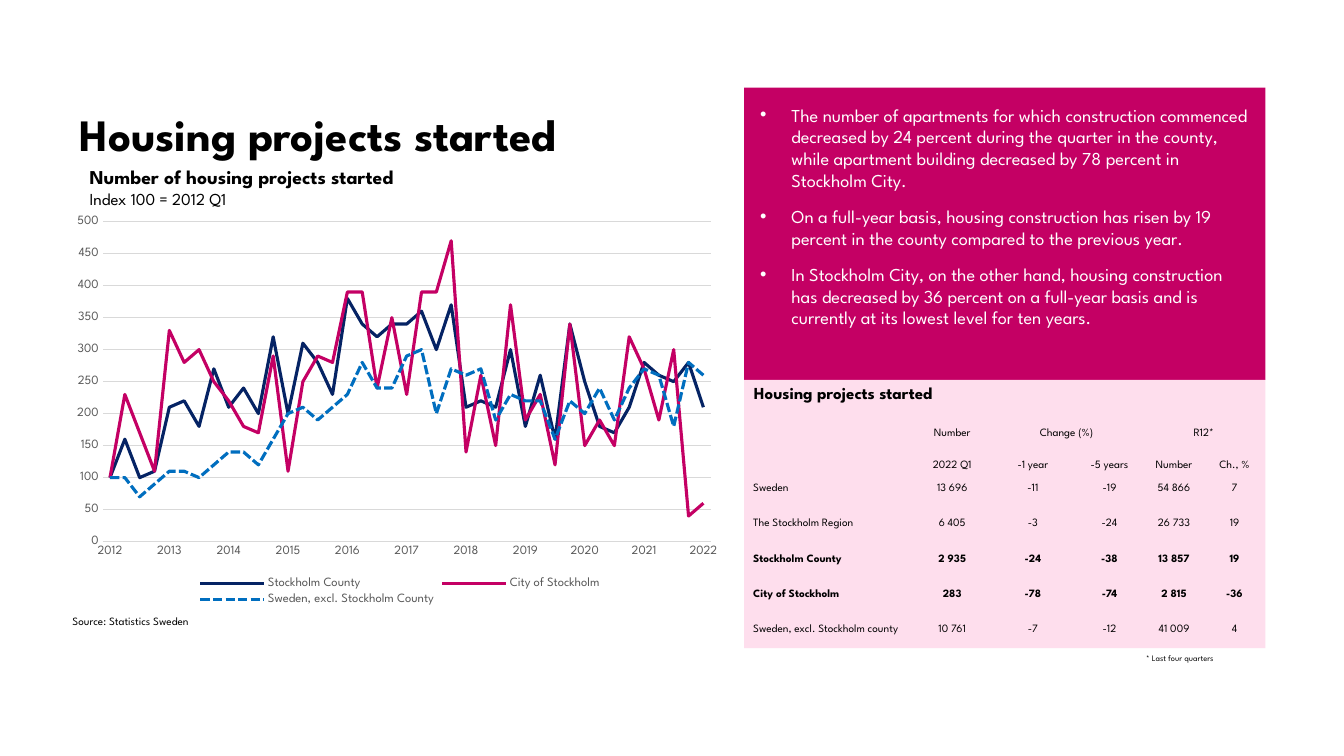
"""Build the slide on housing projects started in Stockholm."""
from lxml import etree
from pptx import Presentation
from pptx.chart.data import CategoryChartData
from pptx.dml.color import RGBColor
from pptx.enum.chart import XL_CHART_TYPE, XL_LEGEND_POSITION, XL_TICK_MARK
from pptx.enum.dml import MSO_LINE
from pptx.enum.shapes import MSO_SHAPE
from pptx.enum.text import MSO_ANCHOR, MSO_AUTO_SIZE, PP_ALIGN
from pptx.oxml import parse_xml
from pptx.oxml.ns import nsdecls, qn
from pptx.util import Inches, Pt

LEFT, CENTER = PP_ALIGN.LEFT, PP_ALIGN.CENTER
TOP, MIDDLE, BOTTOM = MSO_ANCHOR.TOP, MSO_ANCHOR.MIDDLE, MSO_ANCHOR.BOTTOM
NO_TICK = XL_TICK_MARK.NONE
SOLID, DASH = MSO_LINE.SOLID, MSO_LINE.SQUARE_DOT
FONT = "League Spartan"
NO_GRID_STYLE = "{2D5ABB26-0587-4C30-8999-92F81FD0307C}"
COLORS = {"black": "000000", "white": "FFFFFF", "magenta": "C40064", "pink": "FEDEED",
          "navy": "052364", "blue": "006EBF", "label": "595959", "grid": "D9D9D9"}

TITLE = "Housing projects started"
BULLETS = [
    "The number of apartments for which construction commenced decreased by 24 percent during "
    "the quarter in the county, while apartment building decreased by 78 percent in Stockholm City.",
    "On a full-year basis, housing construction has risen by 19 percent in the county compared "
    "to the previous year.",
    "In Stockholm City, on the other hand, housing construction has decreased by 36 percent on a "
    "full-year basis and is currently at its lowest level for ten years.",
]
NOTES = [
    ((0.62, 6.05, 1.57, 0.24), False, [("Source: Statistics Sweden", 8, False)]),
    ((7.38, 3.75, 2.16, 0.3), False, [("Housing projects started", 12, True)]),
    ((11.27, 6.43, 0.95, 0.2), False, [("* Last four quarters", 6, False)]),
    ((0.79, 1.59, 4.58, 0.54), True, [("Number of housing projects started", 14, True),
                                      ("Index 100 = 2012 Q1", 12, False)]),
]
TABLE = [
    ["", "Number", "Change (%)", "", "R12*", ""],
    ["", "2022 Q1", "-1 year", "-5 years", "Number", "Ch., %"],
    ["Sweden", "13 696", "-11", "-19", "54 866", "7"],
    ["The Stockholm Region", "6 405", "-3", "-24", "26 733", "19"],
    ["Stockholm County", "2 935", "-24", "-38", "13 857", "19"],
    ["City of Stockholm", "283", "-78", "-74", "2 815", "-36"],
    ["Sweden, excl. Stockholm county", "10 761", "-7", "-12", "41 009", "4"],
]
HEADER_ROWS = 2
BOLD_ROWS = (4, 5)
MERGED_COLS = (2, 4)
COL_WIDTHS = [1.69, 0.75, 0.85, 0.67, 0.61, 0.59]
ROW_HEIGHTS = [0.3, 0.31] + [0.35] * 5
YEARS = range(2012, 2023)
SERIES = [
    ("Stockholm County", "navy", SOLID,
     [100, 160, 100, 110, 210, 220, 180, 270, 210, 240, 200, 320, 200, 310, 280, 230, 380, 340,
      320, 340, 340, 360, 300, 370, 210, 220, 210, 300, 180, 260, 160, 340, 250, 180, 170, 210,
      280, 260, 250, 280, 210]),
    ("City of Stockholm", "magenta", SOLID,
     [100, 230, 170, 110, 330, 280, 300, 250, 220, 180, 170, 290, 110, 250, 290, 280, 390, 390,
      240, 350, 230, 390, 390, 470, 140, 260, 150, 370, 190, 230, 120, 340, 150, 190, 150, 320,
      270, 190, 300, 40, 60]),
    ("Sweden, excl. Stockholm County", "blue", DASH,
     [100, 100, 70, 90, 110, 110, 100, 120, 140, 140, 120, 160, 200, 210, 190, 210, 230, 280,
      240, 240, 290, 300, 200, 270, 260, 270, 190, 230, 220, 220, 160, 220, 200, 240, 190, 240,
      270, 260, 180, 280, 260]),
]


def rgb(name):
    return RGBColor.from_string(COLORS[name])


def box(*lengths):
    return [Inches(v) for v in lengths]


def place(shape, *lengths):
    shape.left, shape.top, shape.width, shape.height = box(*lengths)


def set_margins(obj, left, top, right, bottom):
    obj.margin_left, obj.margin_top, obj.margin_right, obj.margin_bottom = box(
        left, top, right, bottom)


def set_font(font, size, color="black", bold=False):
    font.name, font.size, font.bold = FONT, Pt(size), bold
    font.color.rgb = rgb(color)


def write(tf, text, size=8, color="black", bold=False, align=LEFT, before=0, bullet=False):
    p = tf.paragraphs[0]
    if p.runs:
        p = tf.add_paragraph()
    p.alignment, p.space_before = align, Pt(before)
    if bullet:
        pPr = p._p.get_or_add_pPr()
        pPr.set("marL", str(Inches(0.31)))
        pPr.set("indent", str(-Inches(0.31)))
        etree.SubElement(pPr, qn("a:buChar")).set("char", "•")
    r = p.add_run()
    r.text = text
    set_font(r.font, size, color, bold)


def set_layout(parent, x, y, w, h, inner=False):
    target = '<c:layoutTarget val="inner"/>' if inner else ""
    modes = '<c:xMode val="edge"/><c:yMode val="edge"/>'
    sizes = "".join(f'<c:{k} val="{v}"/>' for k, v in zip("xywh", (x, y, w, h)))
    layout = parse_xml(f'<c:layout {nsdecls("c")}><c:manualLayout>{target}{modes}{sizes}'
                       '</c:manualLayout></c:layout>')
    for old in parent.findall(qn("c:layout")):
        parent.remove(old)
    parent.insert(0 if inner else 1, layout)


def add_index_chart(s):
    data = CategoryChartData()
    data.categories = [label for y in YEARS for label in (str(y), "", "", "")][:-3]
    for name, _, _, values in SERIES:
        data.add_series(name, values)
    chart = s.shapes.add_chart(XL_CHART_TYPE.LINE, *box(0.62, 2.08, 6.63, 3.97), data).chart
    set_font(chart.font, 10)
    chart.has_title = False
    for series, (_, color, dash, _) in zip(chart.plots[0].series, SERIES):
        series.smooth = False
        line = series.format.line
        line.width, line.color.rgb, line.dash_style = Pt(2.25), rgb(color), dash
    cat, val = chart.category_axis, chart.value_axis
    for axis in (cat, val):
        axis.major_tick_mark = axis.minor_tick_mark = NO_TICK
        set_font(axis.tick_labels.font, 9, "label")
    cat._element.find(qn("c:txPr")).find(qn("a:bodyPr")).set("rot", "-60000000")
    val.minimum_scale, val.maximum_scale, val.major_unit = 0, 500, 50
    val.format.line.fill.background()
    val.has_major_gridlines = True
    for line in (cat.format.line, val.major_gridlines.format.line):
        line.width, line.color.rgb = Pt(0.75), rgb("grid")
    chart.has_legend = True
    legend = chart.legend
    legend.position, legend.include_in_layout = XL_LEGEND_POSITION.BOTTOM, False
    set_font(legend.font, 9, "label")
    set_layout(chart._chartSpace.chart.plotArea, 0.06, 0.03, 0.91, 0.8, inner=True)
    set_layout(legend._element, 0.2, 0.91, 0.61, 0.09)


def add_change_table(s):
    frame = s.shapes.add_table(len(TABLE), len(COL_WIDTHS), *box(7.38, 4.05, 5.17, 2.38))
    table = frame.table
    table._tbl.tblPr.find(qn("a:tableStyleId")).text = NO_GRID_STYLE
    table.first_row = table.horz_banding = False
    for col, width in zip(table.columns, COL_WIDTHS):
        col.width = Inches(width)
    for i, (row, height) in enumerate(zip(TABLE, ROW_HEIGHTS)):
        table.rows[i].height = Inches(height)
        for j, text in enumerate(row):
            cell = table.cell(i, j)
            cell.fill.background()
            set_margins(cell, 0.01 if j else 0.09, 0.01, 0.01, 0)
            cell.vertical_anchor = BOTTOM if i < HEADER_ROWS else MIDDLE
            if text:
                write(cell.text_frame, text, bold=i in BOLD_ROWS, align=CENTER if j else LEFT)
    for j in MERGED_COLS:
        table.cell(0, j).merge(table.cell(0, j + 1))


def main():
    prs = Presentation()
    prs.slide_width, prs.slide_height = box(13.33, 7.5)
    s = prs.slides.add_slide(prs.slide_layouts[1])

    title, body = s.placeholders
    place(title, 0.79, 0.37, 9.22, 1.22)
    place(body, 7.38, 0.87, 5.17, 2.9)
    for shape, margin, anchor in ((title, 0, BOTTOM), (body, 0.16, TOP)):
        tf = shape.text_frame
        set_margins(tf, *[margin] * 4)
        tf.vertical_anchor, tf.word_wrap, tf.auto_size = anchor, True, MSO_AUTO_SIZE.NONE
    write(title.text_frame, TITLE, size=32, bold=True)
    body.fill.solid()
    body.fill.fore_color.rgb = rgb("magenta")
    for i, text in enumerate(BULLETS):
        write(body.text_frame, text, size=13, color="white", before=10 if i else 0, bullet=True)

    panel = s.shapes.add_shape(MSO_SHAPE.RECTANGLE, *box(7.38, 3.77, 5.17, 2.66))
    panel.shadow.inherit = False
    panel.fill.solid()
    panel.fill.fore_color.rgb = rgb("pink")
    panel.line.fill.background()

    for at, wrap, lines in NOTES:
        tf = s.shapes.add_textbox(*box(*at)).text_frame
        tf.word_wrap, tf.auto_size = wrap, MSO_AUTO_SIZE.SHAPE_TO_FIT_TEXT
        for text, size, bold in lines:
            write(tf, text, size=size, bold=bold)

    add_change_table(s)
    add_index_chart(s)
    prs.save("out.pptx")


if __name__ == "__main__":
    main()
